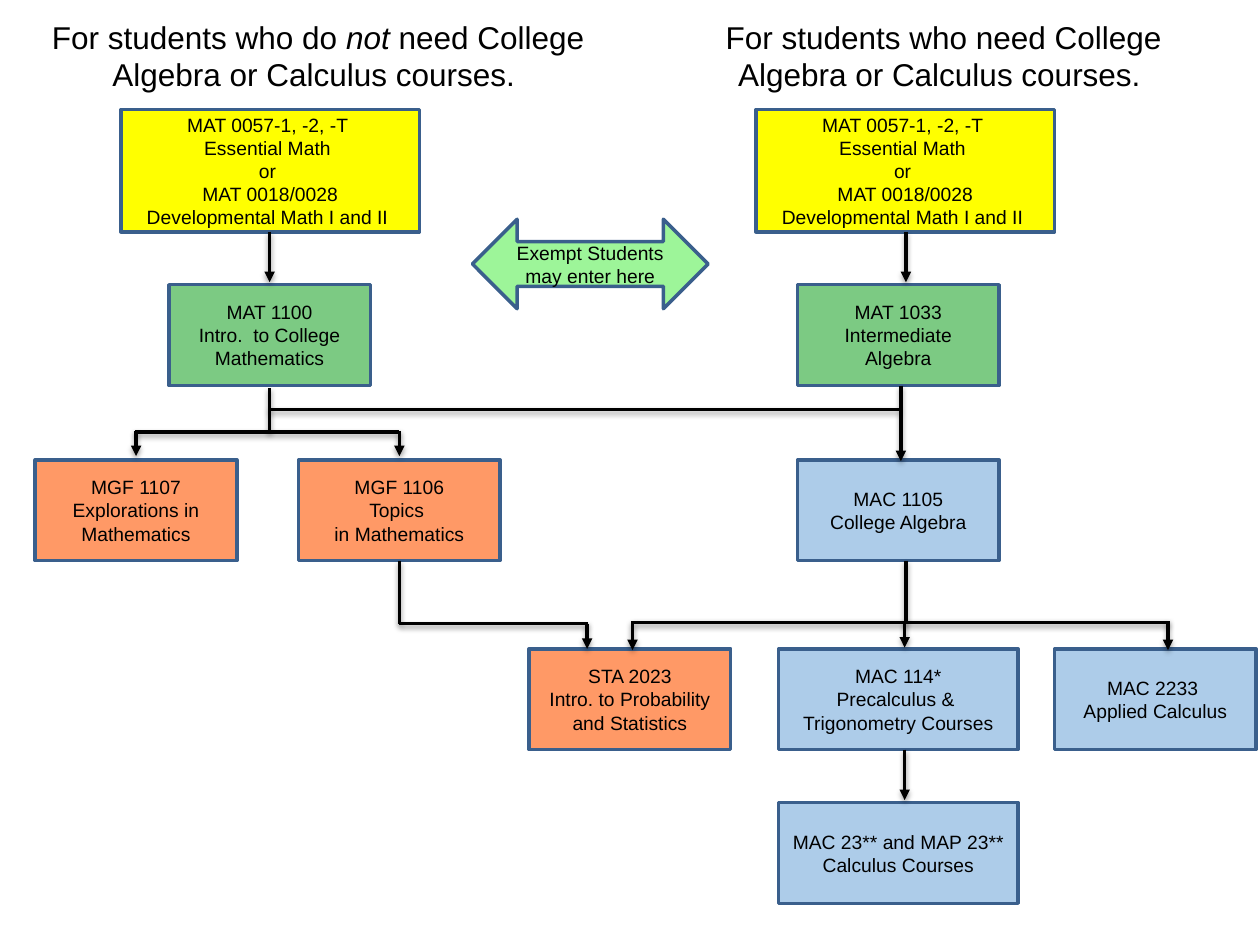
import pptx
import pptx.util
import pptx.dml.color
import pptx.enum.shapes
import pptx.enum.text
import pptx.oxml
import pptx.oxml.ns

Inches, Pt = pptx.util.Inches, pptx.util.Pt
RGBColor = pptx.dml.color.RGBColor
SHAPE = pptx.enum.shapes.MSO_SHAPE
TEXT = pptx.enum.text

BLACK = RGBColor(0, 0, 0)
EDGE = RGBColor(0x3A, 0x5F, 0x8C)
YELLOW = RGBColor(0xFF, 0xFF, 0)
GREEN = RGBColor(0x7C, 0xCA, 0x83)
ORANGE = RGBColor(0xFF, 0x99, 0x66)
BLUE = RGBColor(0xAD, 0xCC, 0xE9)
MINT = RGBColor(0x9D, 0xF5, 0x99)

# Left, width, runs as (text, italic)
TITLES = [
    (0.11, 4.83, [("For students who do ", False), ("not", True),
                  (" need College Algebra or Calculus courses. ", False)]),
    (5.53, 3.92, [("For students who need College Algebra or Calculus courses. ", False)]),
]

ENTRY = ["MAT 0057-1, -2, -T ", "Essential Math ", "or ", "MAT 0018/0028",
         "Developmental Math I and II "]
SMALL, WIDE, START = (1.6, 0.8), (1.9, 0.8), (2.37, 0.97)
ROWS = [0.87, 2.26, 3.65, 5.15, 6.37]

# Left, row, size, fill, lines
COURSES = [
    (0.96, 0, START, YELLOW, ENTRY),
    (6, 0, START, YELLOW, ENTRY),
    (1.34, 1, SMALL, GREEN, ["MAT 1100", "Intro.  to College Mathematics"]),
    (6.33, 1, SMALL, GREEN, ["MAT 1033 Intermediate Algebra"]),
    (0.28, 2, SMALL, ORANGE, ["MGF 1107", "Explorations in Mathematics"]),
    (2.37, 2, SMALL, ORANGE, ["MGF 1106", "Topics ", "in Mathematics"]),
    (6.33, 2, SMALL, BLUE, ["MAC 1105", "College Algebra"]),
    (4.2, 3, SMALL, ORANGE, ["STA 2023", "Intro. to Probability and Statistics"]),
    (6.18, 3, WIDE, BLUE, ["MAC 114*", "Precalculus & ", "Trigonometry Courses"]),
    (8.37, 3, SMALL, BLUE, ["MAC 2233 ", "Applied Calculus"]),
    (6.18, 4, WIDE, BLUE, ["MAC 23** and MAP 23** ", "Calculus Courses"]),
]

# Upright lines: x, top, bottom
ARROWS = [
    (2.14, 1.84, 2.24), (7.19, 1.84, 2.24), (7.15, 3.06, 3.66),
    (1.08, 3.42, 3.62), (3.17, 3.42, 3.62), (7.18, 5.95, 6.35),
    (5.02, 4.93, 5.16), (7.18, 4.94, 5.14), (9.27, 4.93, 5.16),
    (4.66, 4.95, 5.15),
]
STEMS = [(2.14, 3.08, 3.43), (7.19, 4.45, 4.95), (3.17, 4.45, 4.95)]
# Level lines: y, left, right
BARS = [(3.43, 1.07, 3.17), (3.25, 2.13, 7.14), (4.94, 5.03, 9.28), (4.95, 3.17, 4.67)]

NS = pptx.oxml.ns.nsdecls("a")
SHADOW = (f'<a:effectLst {NS}><a:outerShdw blurRad="{Pt(3.1)}" dist="{Pt(1.6)}" '
          'dir="5400000" rotWithShape="0"><a:srgbClr val="000000">'
          '<a:alpha val="38000"/></a:srgbClr></a:outerShdw></a:effectLst>')
HEAD = f'<a:tailEnd {NS} type="triangle"/>'


def write(frame, paras, size):
    """Fill a text frame with centred paragraphs of (text, italic) runs."""
    frame.word_wrap = True
    for i, runs in enumerate(paras):
        para = frame.paragraphs[0] if i == 0 else frame.add_paragraph()
        para.alignment = TEXT.PP_ALIGN.CENTER
        for text, slant in runs:
            run = para.add_run()
            run.text = text
            run.font.name = "Arial"
            run.font.size = Pt(size)
            run.font.italic = slant
            run.font.color.rgb = BLACK


def add_box(kind, left, top, size, fill, lines):
    box = slide.shapes.add_shape(kind, *map(Inches, (left, top, *size)))
    box.shadow.inherit = False
    box.fill.solid()
    box.fill.fore_color.rgb = fill
    box.line.color.rgb = EDGE
    box.line.width = Pt(2)
    box.text_frame.vertical_anchor = TEXT.MSO_ANCHOR.MIDDLE
    write(box.text_frame, [[(line, False)] for line in lines], 11)


def add_line(x1, y1, x2, y2, head=False):
    line = slide.shapes.add_connector(
        pptx.enum.shapes.MSO_CONNECTOR.STRAIGHT, *map(Inches, (x1, y1, x2, y2)))
    line.line.color.rgb = BLACK
    line.line.width = Pt(2)
    if head:
        line.line._get_or_add_ln().append(pptx.oxml.parse_xml(HEAD))
    line._element.spPr.append(pptx.oxml.parse_xml(SHADOW))


deck = pptx.Presentation()
deck.slide_width, deck.slide_height = Inches(10), Inches(7.5)
slide = deck.slides.add_slide(deck.slide_layouts[6])

for left, width, runs in TITLES:
    title = slide.shapes.add_textbox(*map(Inches, (left, 0.09, width, 0.71)))
    write(title.text_frame, [runs], 18)
    title.text_frame.auto_size = TEXT.MSO_AUTO_SIZE.SHAPE_TO_FIT_TEXT

for left, row, size, fill, lines in COURSES:
    add_box(SHAPE.RECTANGLE, left, ROWS[row], size, fill, lines)
add_box(SHAPE.LEFT_RIGHT_ARROW, 3.75, 1.74, (1.87, 0.71), MINT,
        ["Exempt Students may enter here"])

for x, top, bottom in ARROWS:
    add_line(x, top, x, bottom, head=True)
for x, top, bottom in STEMS:
    add_line(x, top, x, bottom)
for y, left, right in BARS:
    add_line(left, y, right, y)

deck.save("out.pptx")
